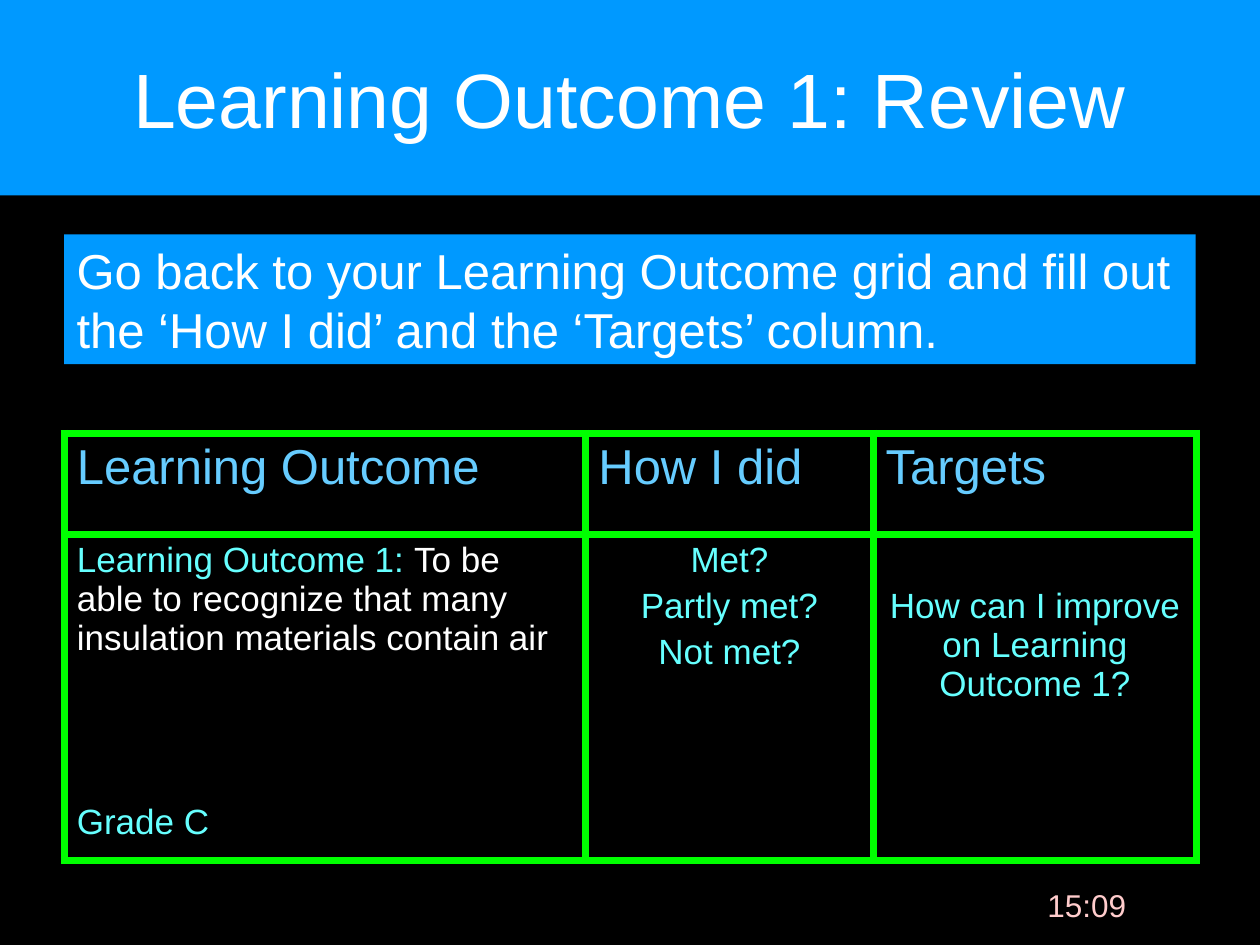
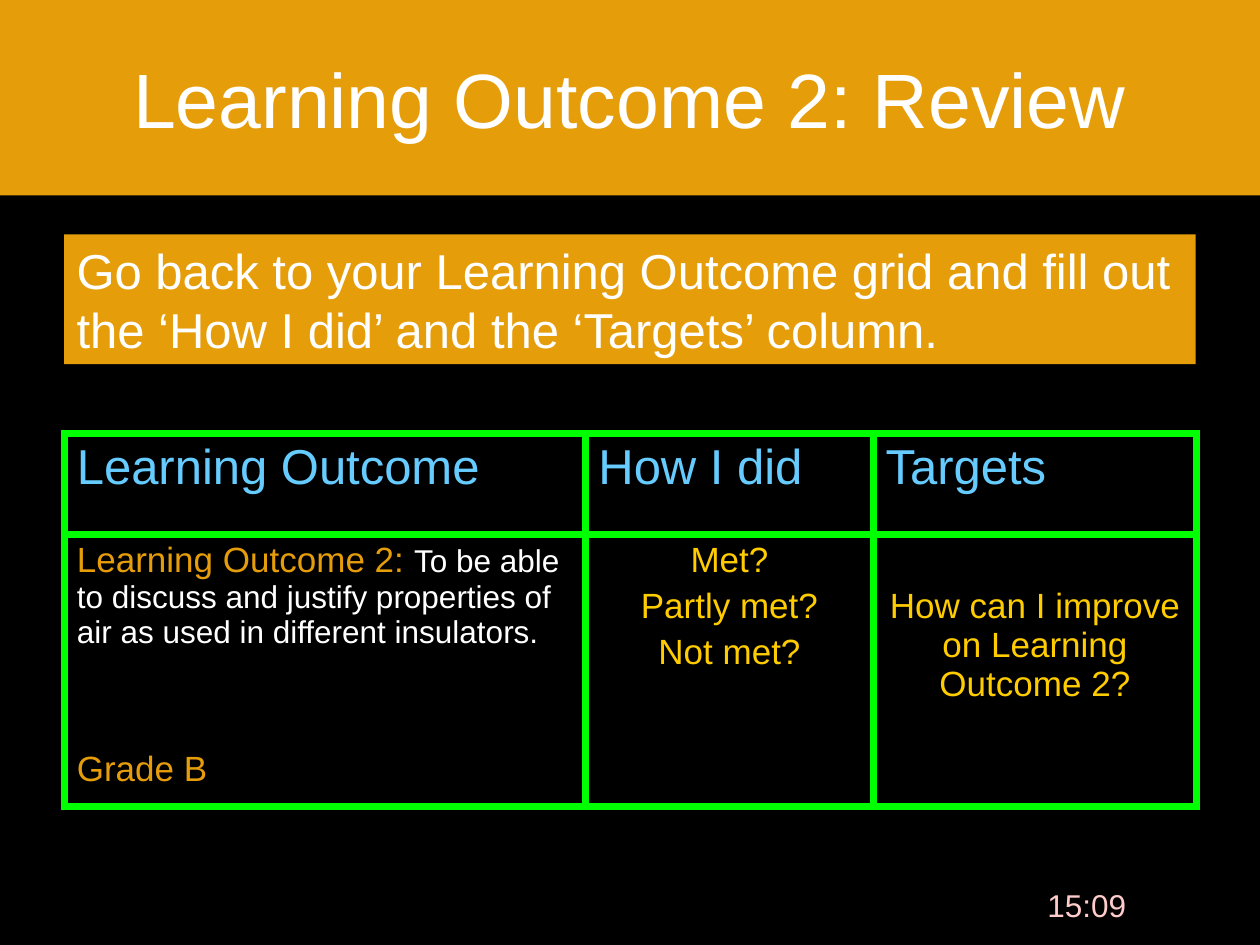
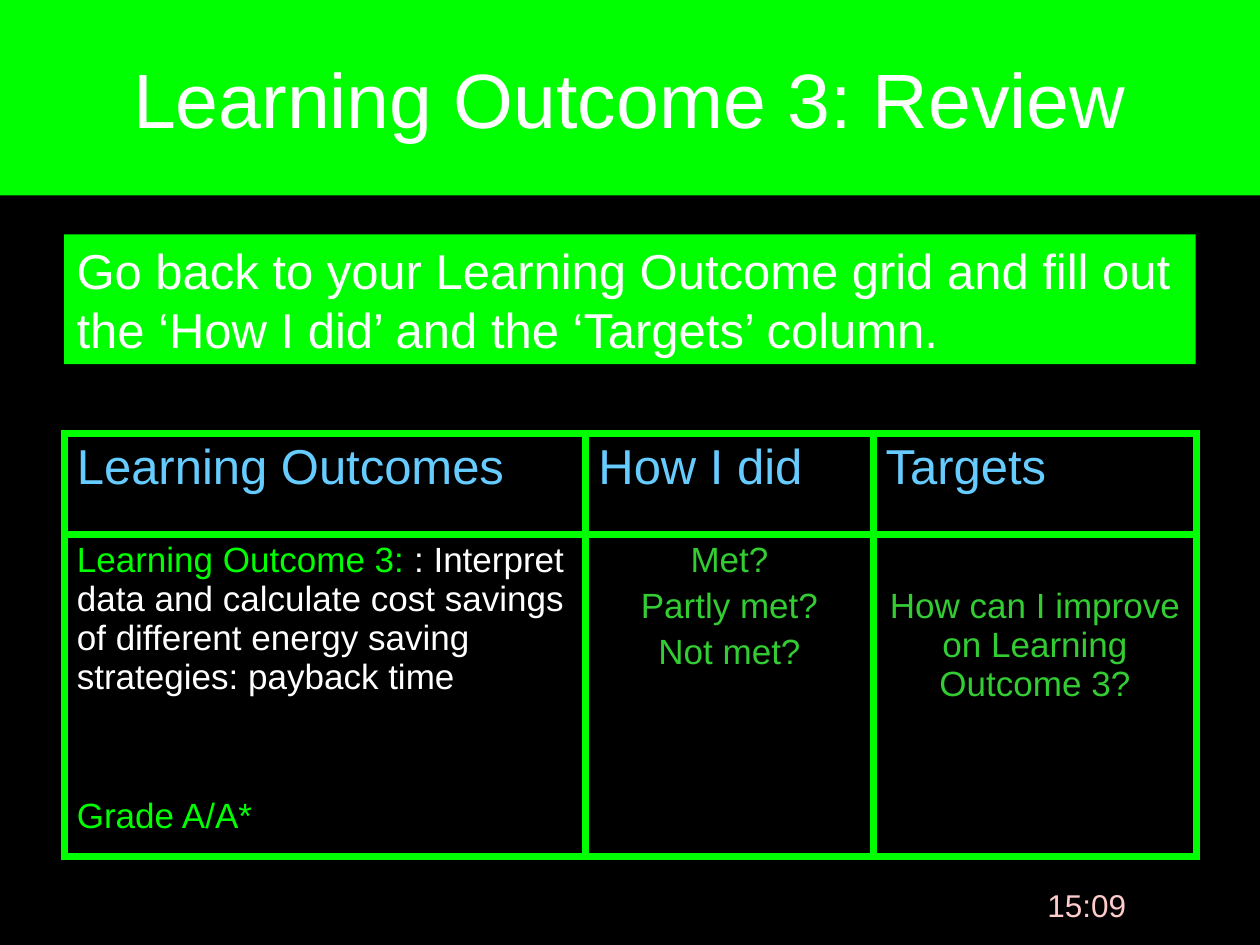
from dataclasses import dataclass

from lxml import etree
from pptx import Presentation
from pptx.dml.color import RGBColor
from pptx.enum import shapes, text
from pptx.oxml import ns
from pptx.util import Inches, Pt

FONT = "Arial"
BLACK, WHITE = "000000", "FFFFFF"
HEADER_BLUE, CLOCK_PINK, BORDER_GREEN = "66CCFF", "FFCCCC", "00FF00"
LEFT, CENTER = text.PP_ALIGN.LEFT, text.PP_ALIGN.CENTER
COLUMN_WIDTHS = (4.14, 2.28, 2.57)
HEADER_HEIGHT = 0.8
INSTRUCTION = ("Go back to your Learning Outcome grid and fill out "
               "the ‘How I did’ and the ‘Targets’ column.")


@dataclass
class Outcome:
    number: int
    heading: str
    goal: str
    goal_size: int
    grade: str
    band_color: str
    label_color: str
    question_color: str
    row_height: float
    grade_gap: int


OUTCOMES = [
    Outcome(1, "Learning Outcome",
            "To be able to recognize that many insulation materials contain air",
            20, "Grade C", "0099FF", "66FFFF", "66FFFF", 2.49, 83),
    Outcome(2, "Learning Outcome",
            "To be able to discuss and justify properties of air as used in "
            "different insulators.",
            18, "Grade B", "E69D0A", "E69D0A", "FFCC00", 2.07, 57),
    Outcome(3, "Learning Outcomes",
            ": Interpret data and calculate cost savings of different energy "
            "saving strategies: payback time",
            20, "Grade A/A*", "00FF00", "00FF00", "33CC33", 2.43, 57),
]


def rgb(color):
    return RGBColor.from_string(color)


def fill_solid(target, color):
    target.fill.solid()
    target.fill.fore_color.rgb = rgb(color)


def format_run(run, size, color):
    run.font.name = FONT
    run.font.size = Pt(size)
    run.font.color.rgb = rgb(color)


def format_text(text_frame, size, color, alignment=LEFT, gap=0):
    """Style every paragraph alike, with a gap in points before each."""
    for paragraph in text_frame.paragraphs:
        paragraph.alignment = alignment
        paragraph.space_before = Pt(gap)
        for run in paragraph.runs:
            format_run(run, size, color)


def add_band(slide, place, words, color, size, alignment, anchor):
    band = slide.shapes.add_shape(shapes.MSO_SHAPE.RECTANGLE, *map(Inches, place))
    band.shadow.inherit = False
    band.line.fill.background()
    fill_solid(band, color)
    band.text_frame.word_wrap = True
    band.text_frame.vertical_anchor = anchor
    band.text_frame.text = words
    format_text(band.text_frame, size, WHITE, alignment)


def add_clock(slide):
    clock = slide.shapes.add_textbox(*map(Inches, (7.84, 6.98, 1.57, 0.52)))
    clock.text_frame.word_wrap = True
    clock.text_frame.text = "15:09"
    format_text(clock.text_frame, 18, CLOCK_PINK, CENTER)


def set_borders(cell, color, width):
    properties = cell._tc.get_or_add_tcPr()
    for position, side in enumerate(("a:lnL", "a:lnR", "a:lnT", "a:lnB")):
        line = etree.Element(ns.qn(side), w=str(Pt(width)))
        solid = etree.SubElement(line, ns.qn("a:solidFill"))
        etree.SubElement(solid, ns.qn("a:srgbClr"), val=color)
        properties.insert(position, line)


def fill_goal_cell(cell, outcome):
    goal = cell.text_frame.paragraphs[0]
    goal.text = f"Learning Outcome {outcome.number}: "
    format_run(goal.runs[0], 20, outcome.label_color)
    goal_run = goal.add_run()
    goal_run.text = outcome.goal
    format_run(goal_run, outcome.goal_size, WHITE)
    grade = cell.text_frame.add_paragraph()
    grade.text = outcome.grade
    grade.space_before = Pt(outcome.grade_gap)
    format_run(grade.runs[0], 20, outcome.label_color)


def add_review_table(slide, outcome):
    heights = (HEADER_HEIGHT, outcome.row_height)
    place = (0.51, 3.44, sum(COLUMN_WIDTHS), sum(heights))
    table = slide.shapes.add_table(2, 3, *map(Inches, place)).table
    for column, width in zip(table.columns, COLUMN_WIDTHS):
        column.width = Inches(width)
    for row, height in zip(table.rows, heights):
        row.height = Inches(height)
    for cell in table.iter_cells():
        fill_solid(cell, BLACK)
        set_borders(cell, BORDER_GREEN, 4.5)

    for column, heading in enumerate((outcome.heading, "How I did", "Targets")):
        header = table.cell(0, column).text_frame
        header.text = heading
        format_text(header, 28, HEADER_BLUE)

    fill_goal_cell(table.cell(1, 0), outcome)
    questions = ("Met?\nPartly met?\nNot met?",
                 f"How can I improve on Learning Outcome {outcome.number}?")
    for column, question in enumerate(questions, start=1):
        frame = table.cell(1, column).text_frame
        frame.text = question
        format_text(frame, 20, outcome.question_color, CENTER, gap=4)
    table.cell(1, 2).margin_top = Inches(0.42)


def add_review_slide(presentation, outcome):
    slide = presentation.slides.add_slide(presentation.slide_layouts[6])
    fill_solid(slide.background, BLACK)
    add_clock(slide)
    add_band(slide, (0, 0, 10, 1.55), f"Learning Outcome {outcome.number}: Review",
             outcome.band_color, 44, CENTER, text.MSO_ANCHOR.MIDDLE)
    add_review_table(slide, outcome)
    add_band(slide, (0.51, 1.86, 8.98, 1.03), INSTRUCTION,
             outcome.band_color, 28, LEFT, text.MSO_ANCHOR.TOP)


def main():
    presentation = Presentation()
    presentation.slide_width = Inches(10)
    presentation.slide_height = Inches(7.5)
    for outcome in OUTCOMES:
        add_review_slide(presentation, outcome)
    presentation.save("out.pptx")


if __name__ == "__main__":
    main()
